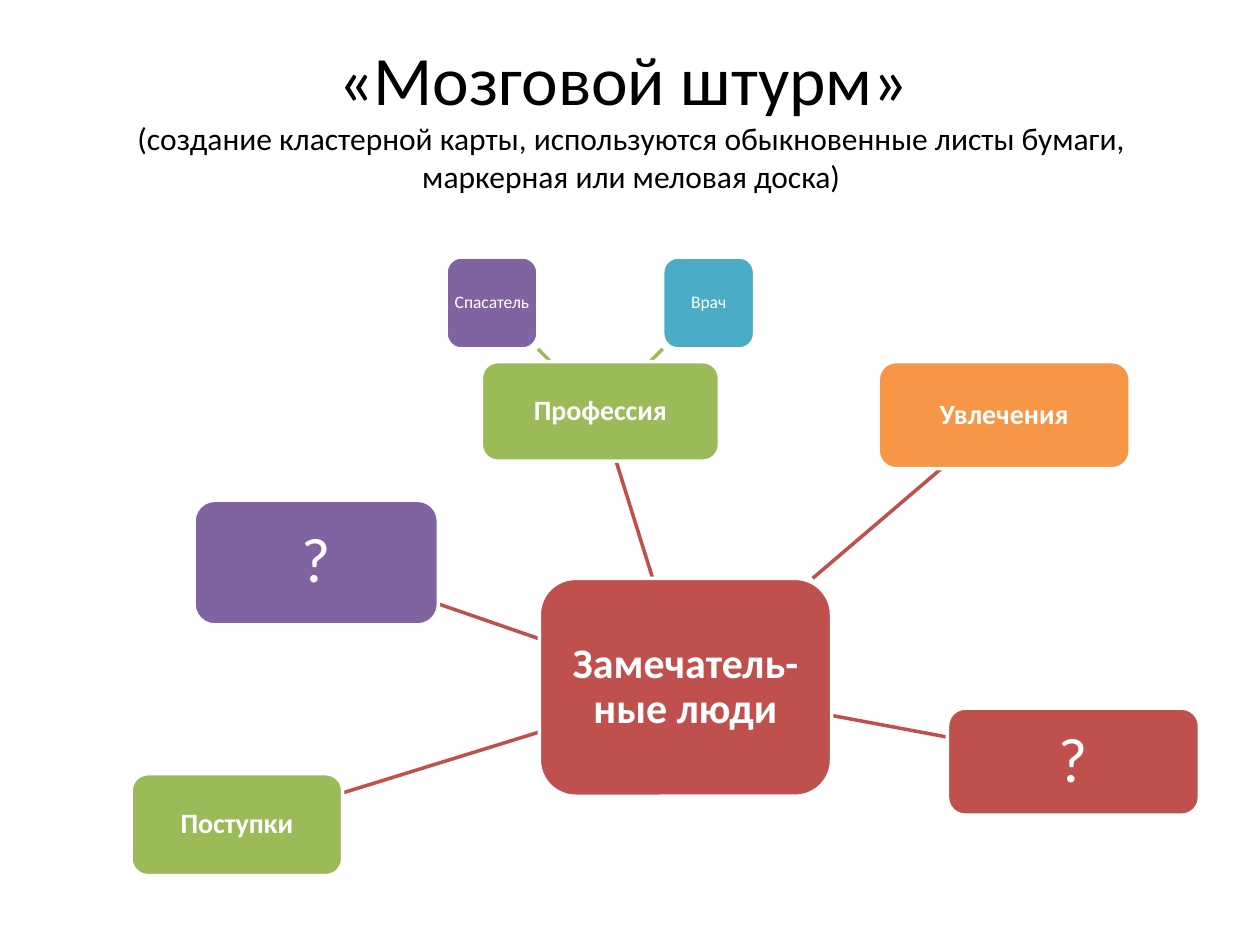
import pptx
import pptx.util
import pptx.dml.color
import pptx.enum.shapes
import pptx.enum.text
import pptx.oxml.ns
from lxml import etree

Inches = pptx.util.Inches
Pt = pptx.util.Pt

COLORS = {
    "black": "000000",
    "white": "FFFFFF",
    "red": "C0504D",
    "green": "9BBB59",
    "purple": "8064A2",
    "teal": "4BACC6",
    "orange": "F79646",
}
FONT = "Calibri"
CENTER = pptx.enum.text.PP_ALIGN.CENTER
MIDDLE = pptx.enum.text.MSO_ANCHOR.MIDDLE

TOPIC_FONT = {"size": Pt(16), "bold": True}
QUESTION_FONT = {"size": Pt(36), "bold": False}
EXAMPLE_FONT = {"size": Pt(10), "bold": False}

CENTRE = ("Замечатель-ные люди", (4.28, 4.59, 2.32, 1.73), "red",
          {"size": Pt(24), "bold": True}, 0.15)
TOPICS = [
    ("Профессия", (3.82, 2.87, 1.89, 0.79), "green", TOPIC_FONT, 0.08),
    ("Увлечения", (6.97, 2.87, 2, 0.85), "orange", TOPIC_FONT, 0.08),
    ("?", (7.52, 5.62, 2, 0.85), "red", QUESTION_FONT, 0.14),
    ("Поступки", (1.04, 6.14, 1.68, 0.81), "green", TOPIC_FONT, 0.08),
    ("?", (1.54, 3.97, 1.94, 0.99), "purple", QUESTION_FONT, 0.14),
]
EXAMPLES = [
    ("Спасатель", (3.54, 2.04, 0.73, 0.73), "purple", EXAMPLE_FONT, 0.01),
    ("Врач", (5.26, 2.04, 0.73, 0.73), "teal", EXAMPLE_FONT, 0.01),
]
TOPIC_LINKS = [
    (4.28, 5.07, 3.47, 4.79),
    (4.28, 5.81, 2.73, 6.29),
    (6.61, 5.68, 7.52, 5.85),
    (6.45, 4.59, 7.47, 3.72),
    (5.18, 4.59, 4.89, 3.66),
]
EXAMPLE_LINKS = [(4.37, 2.87, 4.27, 2.77), (5.16, 2.87, 5.26, 2.77)]


def rgb(name):
    return pptx.dml.color.RGBColor.from_string(COLORS[name])


def apply(target, values):
    for attribute, value in values.items():
        setattr(target, attribute, value)


def place(part, box):
    sides = ("left", "top", "width", "height")
    apply(part, {side: Inches(length) for side, length in zip(sides, box)})


def add_heading(slide, box):
    heading = slide.shapes.title
    place(heading, box)
    apply(heading.text_frame, {"word_wrap": True, "vertical_anchor": MIDDLE})
    paragraph = heading.text_frame.paragraphs[0]
    paragraph.alignment = CENTER
    name = paragraph.add_run()
    name.text = "«Мозговой штурм» "
    paragraph.add_line_break()
    method = paragraph.add_run()
    method.text = ("(создание кластерной карты, используются обыкновенные "
                   "листы бумаги, маркерная или меловая доска)")
    for run, size in ((name, 39.6), (method, 18)):
        apply(run.font, {"size": Pt(size), "name": FONT})
        run.font.color.rgb = rgb("black")


def add_link(slide, ends, color):
    link = slide.shapes.add_connector(
        pptx.enum.shapes.MSO_CONNECTOR.STRAIGHT, *map(Inches, ends))
    link.line.color.rgb = rgb(color)
    link.line.width = Pt(2)
    etree.SubElement(link._element.spPr, pptx.oxml.ns.qn("a:effectLst"))


def add_node(slide, label, box, color, font, inset):
    node = slide.shapes.add_shape(
        pptx.enum.shapes.MSO_SHAPE.ROUNDED_RECTANGLE, *map(Inches, box))
    node.shadow.inherit = False
    node.fill.solid()
    node.fill.fore_color.rgb = rgb(color)
    node.line.color.rgb = rgb("white")
    node.line.width = Pt(2)
    margins = ("margin_left", "margin_top", "margin_right", "margin_bottom")
    apply(node.text_frame, {margin: Inches(inset) for margin in margins})
    apply(node.text_frame, {"word_wrap": True, "vertical_anchor": MIDDLE})
    paragraph = node.text_frame.paragraphs[0]
    apply(paragraph, {"alignment": CENTER, "line_spacing": 0.9})
    run = paragraph.add_run()
    run.text = label
    apply(run.font, {"name": FONT, **font})
    run.font.color.rgb = rgb("white")


def add_cluster_map(slide):
    for links, color in ((TOPIC_LINKS, "red"), (EXAMPLE_LINKS, "green")):
        for ends in links:
            add_link(slide, ends, color)
    for node in [CENTRE, *TOPICS, *EXAMPLES]:
        add_node(slide, *node)


def main():
    deck = pptx.Presentation()
    apply(deck, {"slide_width": Inches(10), "slide_height": Inches(7.5)})
    slide = deck.slides.add_slide(deck.slide_layouts[5])
    add_heading(slide, (0.51, 0.29, 9, 1.25))
    add_cluster_map(slide)
    deck.save("out.pptx")


if __name__ == "__main__":
    main()
